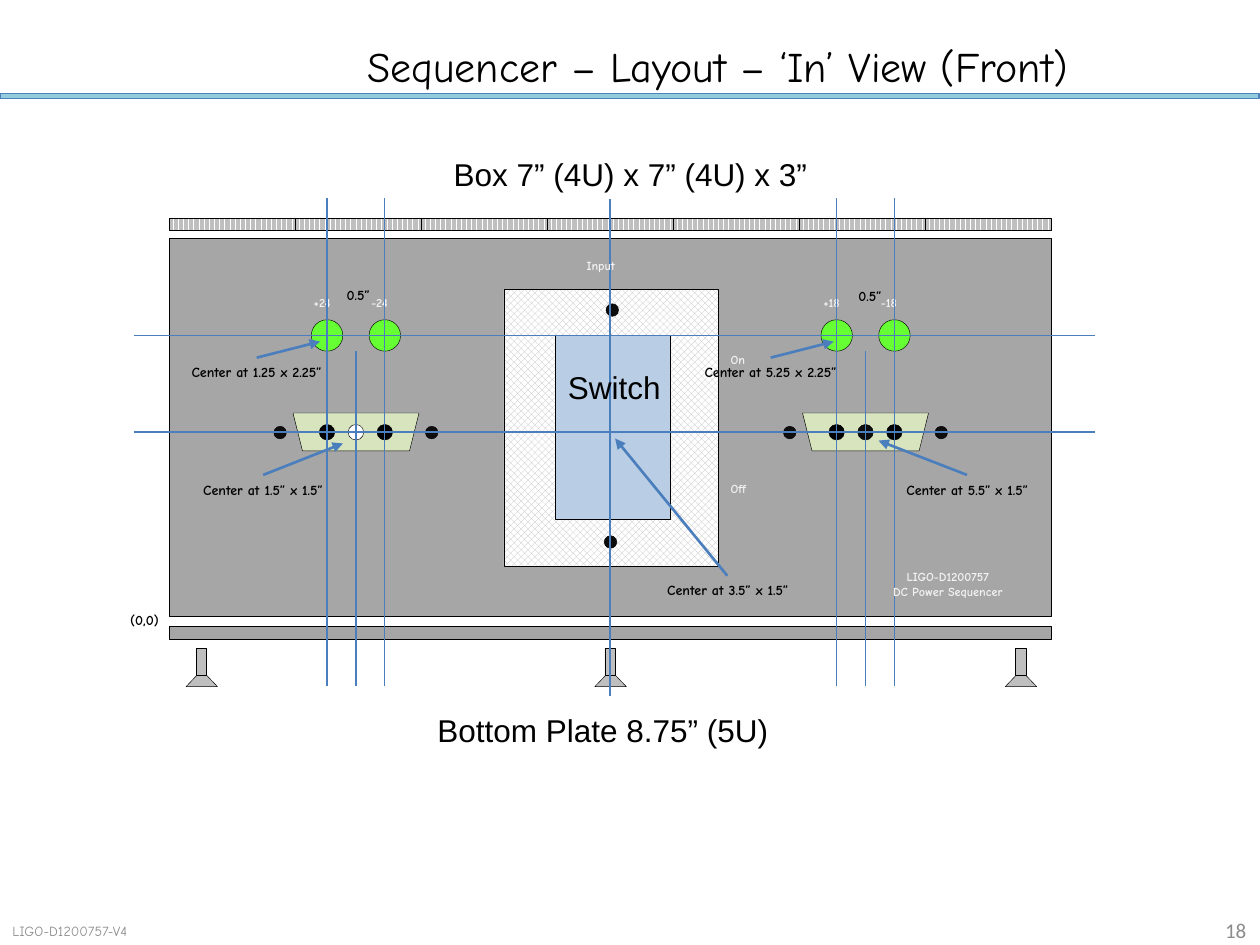
from dataclasses import dataclass

from pptx import Presentation
from pptx.dml.color import RGBColor
from pptx.enum.dml import MSO_PATTERN as PATTERN
from pptx.enum.shapes import MSO_CONNECTOR as CONN, MSO_SHAPE as SHAPE
from pptx.enum.text import MSO_ANCHOR as ANCHOR, MSO_AUTO_SIZE as AUTO, PP_ALIGN as ALIGN
from pptx.oxml.ns import qn
from pptx.util import Pt
from lxml.etree import SubElement


@dataclass(frozen=True)
class Theme:
    hand: str = "Comic Neue"
    sans: str = "Arial"
    number: str = "Calibri"
    black: str = "000000"
    white: str = "FFFFFF"
    screw: str = "0D0D0D"
    panel: str = "A6A6A6"
    metal: str = "BFBFBF"
    lamp: str = "66FF33"
    socket: str = "D7E4BD"
    switch: str = "B9CDE5"
    line: str = "4B7EBC"
    rule: str = "93CDDD"
    rule_edge: str = "4F81BD"
    ink: str = "F2F2F2"
    muted: str = "8C8C8C"
    title: int = 24
    heading: int = 18
    page: int = 12
    note: int = 8
    label: int = 7
    outline: float = 0.25
    thin: float = 0.75
    arrow: float = 1.5


def rgb(value):
    return RGBColor.from_string(value)


class Drawing:
    def __init__(self, slide, theme):
        self.s = slide
        self.t = theme

    def title(self, text, x, y, w, h):
        sp = self.s.shapes.title
        sp.left, sp.top, sp.width, sp.height = Pt(x), Pt(y), Pt(w), Pt(h)
        self.set_text(sp.text_frame, text, self.t.title, self.t.hand, self.t.black, ALIGN.CENTER)
        sp.text_frame.vertical_anchor = ANCHOR.MIDDLE

    def set_text(self, tf, text, size, font, color, align, bold=False):
        tf.text = text
        for p in tf.paragraphs:
            p.alignment = align
            p.font.size, p.font.name, p.font.bold = Pt(size), font, bold
            p.font.color.rgb = rgb(color)

    def text(self, text, x, y, w, h, size, font, color, align=ALIGN.CENTER, bold=False,
             anchor=ANCHOR.TOP, wrap=True):
        tf = self.s.shapes.add_textbox(Pt(x), Pt(y), Pt(w), Pt(h)).text_frame
        tf.word_wrap = wrap
        tf.auto_size = AUTO.NONE if anchor == ANCHOR.MIDDLE else AUTO.SHAPE_TO_FIT_TEXT
        tf.vertical_anchor = anchor
        self.set_text(tf, text, size, font, color, align, bold)

    def heading(self, text, x, y, w, wrap=True):
        self.text(text, x, y, w, 29, self.t.heading, self.t.sans, self.t.black, wrap=wrap)

    def note(self, text, x, y, w=108):
        self.text(text, x, y, w, 17, self.t.note, self.t.hand, self.t.black, bold=True)

    def label(self, text, x, y, w=36, h=15.8, align=ALIGN.LEFT):
        self.text(text, x, y, w, h, self.t.label, self.t.hand, self.t.ink, align, bold=True)

    def shape(self, kind, x, y, w, h, fill, edge=None, width=None, pattern=None, rotation=0):
        sp = self.s.shapes.add_shape(kind, Pt(x), Pt(y), Pt(w), Pt(h))
        sp.shadow.inherit = False
        sp.rotation = rotation
        if pattern is None:
            sp.fill.solid()
            sp.fill.fore_color.rgb = rgb(fill)
        else:
            sp.fill.patterned()
            sp.fill.pattern = pattern
            sp.fill.fore_color.rgb = rgb(fill)
            sp.fill.back_color.rgb = rgb(self.t.white)
        sp.line.color.rgb = rgb(edge or self.t.black)
        sp.line.width = Pt(width or self.t.outline)

    def rect(self, x, y, w, h, fill, **style):
        self.shape(SHAPE.RECTANGLE, x, y, w, h, fill, **style)

    def dot(self, cx, cy, d, fill):
        self.shape(SHAPE.OVAL, cx - d / 2, cy - d / 2, d, d, fill)

    def line(self, x1, y1, x2, y2, arrow=False):
        c = self.s.shapes.add_connector(CONN.STRAIGHT, Pt(x1), Pt(y1), Pt(x2), Pt(y2))
        c.line.color.rgb = rgb(self.t.line)
        c.line.width = Pt(self.t.arrow if arrow else self.t.thin)
        props = c.element.spPr
        if arrow:
            SubElement(props.find(qn("a:ln")), qn("a:tailEnd"), type="triangle")
        SubElement(props, qn("a:effectLst"))

    def foot(self, x):
        self.shape(SHAPE.ISOSCELES_TRIANGLE, x, 383, 18, 9.4, self.t.metal)
        self.rect(x + 5.8, 370.6, 6, 15.2, self.t.metal)

    def port(self, cx, middle_pin):
        t = self.t
        self.shape(SHAPE.TRAPEZOID, cx - 36, 236, 72, 21.6, t.socket, rotation=180)
        for dx, fill in ((-PITCH, t.black), (0, middle_pin), (PITCH, t.black)):
            self.dot(cx + dx, 247, 8.9, fill)
        for side in (-1, 1):
            self.dot(cx + side * PITCH, 191.7, 18, t.lamp)
            self.dot(cx + side * 43.3, 247.2, 7.2, t.screw)


LEFT, TOP, WIDTH, HEIGHT = 96.6, 136.2, 504, 216
PITCH = 16.5
PORTS = ((203.4, "24", Theme.white), (494.6, "18", Theme.screw))
NOTES = (
    ("Center at 5.5” x 1.5”", 494.8, 271.4, 116),
    ("Center at 1.5” x 1.5”", 96.4, 271.4, 108),
    ("Center at 3.5” x 1.5”", 358, 328.7, 116),
    ("Center at 1.25 x 2.25”", 92.7, 204.2, 108),
    ("Center at 5.25 x 2.25”", 386.4, 204.2, 108),
    ("(0,0)", 28.6, 346, 108),
    ("0.5”", 176.2, 160.4, 57),
    ("0.5”", 468.6, 160.8, 57),
)
ARROWS = (
    (415.6, 329, 351.5, 250.6),
    (552.6, 271.4, 502, 251.8),
    (150.4, 271.4, 196, 253.4),
    (146.7, 204.4, 182.9, 195.2),
    (440.4, 204.4, 476.4, 195.2),
)


def main():
    prs = Presentation()
    prs.slide_width, prs.slide_height = Pt(720), Pt(540)
    t = Theme()
    d = Drawing(prs.slides.add_slide(prs.slide_layouts[5]), t)

    d.rect(0, 53.3, 719.5, 2.9, t.rule, edge=t.rule_edge, width=t.thin)
    d.text("LIGO-D1200757-V4", 0, 525, 100, 14.4, t.note, t.hand, t.muted, ALIGN.LEFT,
           anchor=ANCHOR.MIDDLE)
    d.text("18", 666.7, 523.6, 52.6, 15.8, t.page, t.number, t.muted, ALIGN.RIGHT,
           anchor=ANCHOR.MIDDLE)
    d.title("Sequencer – Layout – ‘In’ View (Front)", 136, 21.6, 548, 31.7)
    d.heading("Bottom Plate 8.75” (5U)", 234, 402.8, 221)
    d.heading("Box 7” (4U) x 7” (4U) x 3”", 249.8, 85, 221)

    for i in range(7):
        d.rect(LEFT + 72 * i, 124.5, 72, 7.2, t.metal, pattern=PATTERN.DARK_VERTICAL)
    d.rect(LEFT, 357.8, WIDTH, 7.8, t.panel)
    for x in (106.3, 339.9, 574.4):
        d.foot(x)
    d.rect(LEFT, TOP, WIDTH, HEIGHT, t.panel)
    d.rect(288, 165.4, 122.4, 158.2, t.metal, pattern=PATTERN.LARGE_CHECKER_BOARD)
    d.dot(349.9, 177.2, 7.2, t.screw)
    d.dot(348.9, 309.7, 7.2, t.screw)
    d.rect(317.4, 191.8, 65.4, 105.1, t.switch)

    for cx, volts, middle_pin in PORTS:
        d.port(cx, middle_pin)
        d.label("+" + volts, cx - 31.2, 164.9)
        d.label("-" + volts, cx + 1.7, 164.9)
        for dx, top in ((-PITCH, 113.4), (0, 200.3), (PITCH, 113.4)):
            d.line(cx + dx, 392.2, cx + dx, top)
    d.line(348.5, 398, 348.5, 113.8)
    for y in (246.9, 191.6):
        d.line(76.4, y, 625.7, y)

    for text, x, y, w in NOTES:
        d.note(text, x, y, w)
    for ends in ARROWS:
        d.line(*ends, arrow=True)
    d.label("Input", 328.2, 144)
    d.label("On", 410.4, 198)
    d.label("Off", 410.4, 271.4)
    d.label("LIGO-D1200757\nDC Power Sequencer", 494.8, 321.8, 93.6, 24.5, ALIGN.CENTER)
    d.heading("Switch", 316.8, 206.6, 68.4, wrap=False)

    prs.save("out.pptx")


if __name__ == "__main__":
    main()
